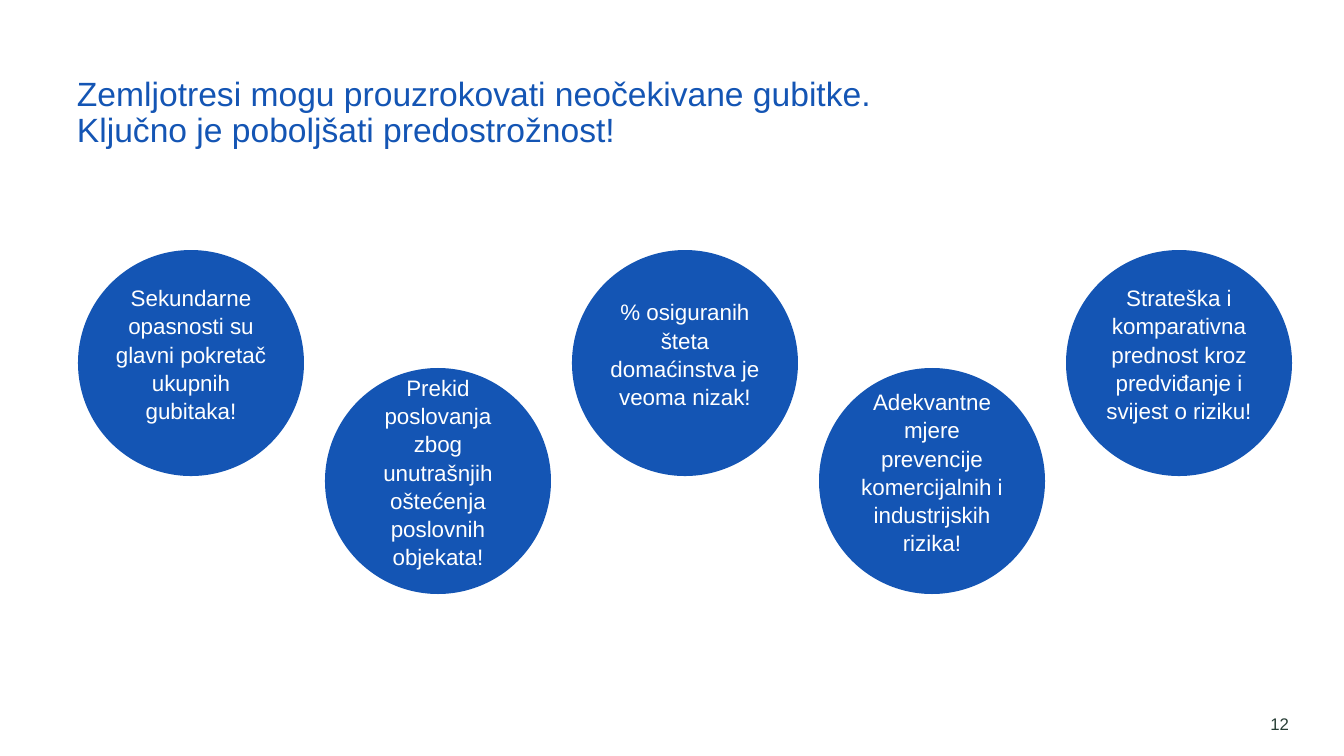
import pptx
import pptx.util
import pptx.dml.color
import pptx.enum.shapes
import pptx.enum.text

TITLE = ("Zemljotresi mogu prouzrokovati neočekivane gubitke.\v"
         "Ključno je poboljšati predostrožnost!")
POINTS = [
    "Sekundarne opasnosti su glavni pokretač ukupnih gubitaka!",
    "Prekid poslovanja zbog unutrašnjih oštećenja poslovnih objekata!",
    "% osiguranih šteta domaćinstva je veoma nizak!",
    "Adekvantne mjere prevencije komercijalnih i industrijskih rizika!",
    "Strateška i komparativna prednost kroz predviđanje i svijest o riziku!",
]
PAGE = "12"

BLUE = pptx.dml.color.RGBColor(0x14, 0x55, 0xB4)
WHITE = pptx.dml.color.RGBColor(0xFF, 0xFF, 0xFF)
DARK = pptx.dml.color.RGBColor(0x28, 0x3E, 0x36)

FONT = "Arial"
ALIGN = pptx.enum.text.PP_ALIGN
ANCHOR = pptx.enum.text.MSO_ANCHOR

SIZE = 226            # circle diameter
LEFT, STEP = 78, 247  # first circle and pitch
TOPS = (250, 368)     # circles alternate between two rows


def px(n):
    return pptx.util.Emu(round(n * 914400 / 100.8))


def box(left, top, width, height):
    return [px(n) for n in (left, top, width, height)]


def write(shape, text, size, color, align=ALIGN.LEFT, anchor=ANCHOR.TOP,
          space=1.0, wrap=True, top=0, bottom=0):
    """Fill the shape with one formatted paragraph; top and bottom are insets in px."""
    frame = shape.text_frame
    frame.auto_size = pptx.enum.text.MSO_AUTO_SIZE.NONE
    frame.word_wrap = wrap
    frame.vertical_anchor = anchor
    frame.margin_left = frame.margin_right = 0
    frame.margin_top, frame.margin_bottom = px(top), px(bottom)
    para = frame.paragraphs[0]
    para.text = text
    para.alignment = align
    para.line_spacing = space
    for run in para.runs:
        run.font.name = FONT
        run.font.size = pptx.util.Pt(size)
        run.font.color.rgb = color


def main():
    deck = pptx.Presentation()
    deck.slide_width, deck.slide_height = px(1344), px(756)
    slide = deck.slides.add_slide(deck.slide_layouts.get_by_name("Title Only"))

    title = slide.shapes.title
    title.left, title.top, title.width, title.height = box(77, 77, 1214, 77)
    write(title, TITLE, 24, BLUE, space=0.9)

    for i, text in enumerate(POINTS):
        circle = slide.shapes.add_shape(
            pptx.enum.shapes.MSO_SHAPE.OVAL,
            *box(LEFT + i * STEP, TOPS[i % 2], SIZE, SIZE))
        circle.shadow.inherit = False
        circle.fill.solid()
        circle.fill.fore_color.rgb = BLUE
        circle.line.fill.background()
        write(circle, text, 16, WHITE, align=ALIGN.CENTER,
              anchor=ANCHOR.MIDDLE, space=1.05, top=20, bottom=39)

    page = slide.shapes.add_textbox(*box(1258, 714, 31, 20))
    write(page, PAGE, 12, DARK, align=ALIGN.RIGHT, anchor=ANCHOR.BOTTOM,
          wrap=False)

    deck.save("out.pptx")


if __name__ == "__main__":
    main()
